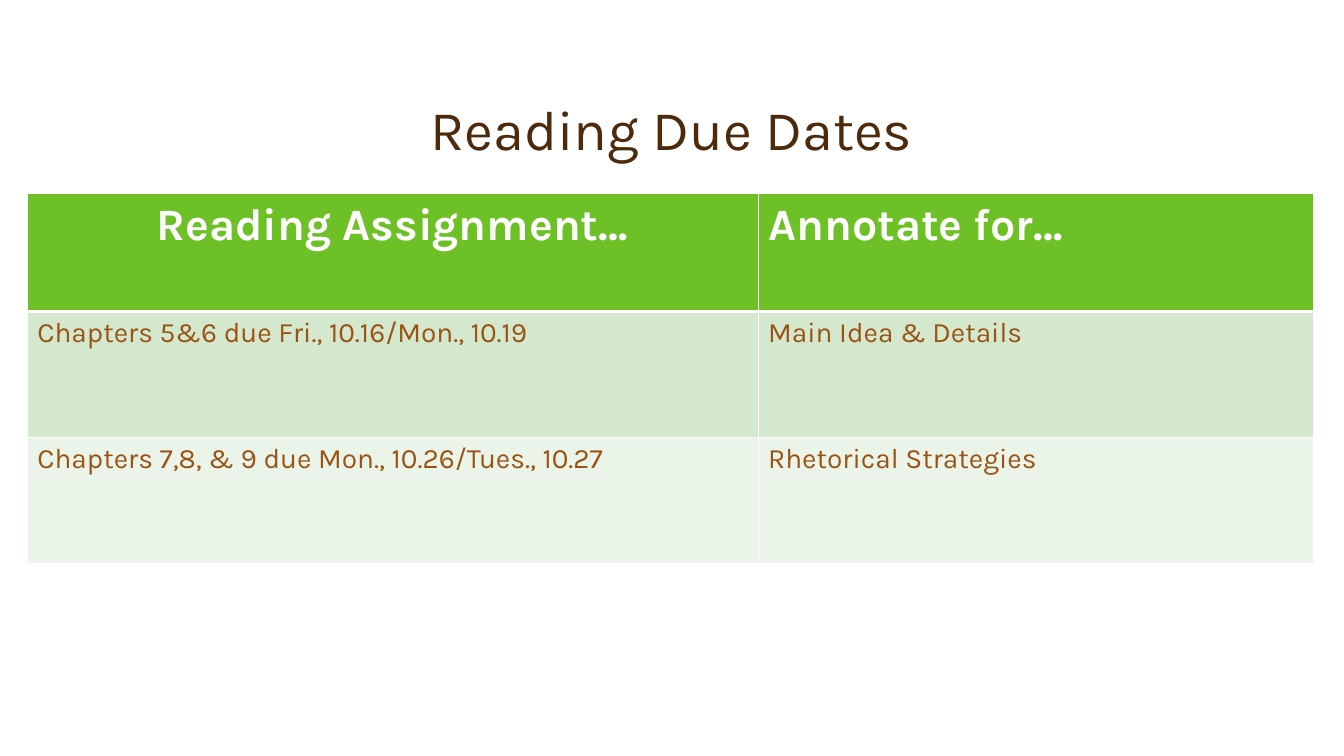
from lxml.etree import SubElement
from pptx import Presentation
from pptx.dml.color import RGBColor
from pptx.enum.text import MSO_ANCHOR, PP_ALIGN
from pptx.oxml.ns import qn
from pptx.util import Pt

FONT = "Karla"
WHITE = "FFFFFF"
GREEN = "6DC025"
BANDS = ("D4E8CD", "EBF4E8")
TITLE_BROWN = "4D2A0B"
TEXT_BROWN = "9A5315"
COL_WIDTHS = (522, 396.72)
ROW_HEIGHTS = (84, 90, 90)
ROWS = (
    ("Reading Assignment…", "Annotate for…"),
    ("Chapters 5&6 due Fri., 10.16/Mon., 10.19", "Main Idea & Details"),
    ("Chapters 7,8, & 9 due Mon., 10.26/Tues., 10.27", "Rhetorical Strategies"),
)


def rgb(color):
    """Return the colour for a hex string."""
    return RGBColor.from_string(color)


def add_run(p, text, size, color, bold=False):
    """Add a styled run to a paragraph."""
    r = p.add_run()
    r.text = text
    r.font.name = FONT
    r.font.size = Pt(size)
    r.font.bold = bold
    r.font.color.rgb = rgb(color)


def add_title(s, text, left, top, width, height):
    """Add the centred title, anchored at the bottom of its box."""
    tf = s.shapes.add_textbox(Pt(left), Pt(top), Pt(width), Pt(height)).text_frame
    tf.word_wrap = True
    tf.vertical_anchor = MSO_ANCHOR.BOTTOM
    p = tf.paragraphs[0]
    p.alignment = PP_ALIGN.CENTER
    p.line_spacing = 0.9
    add_run(p, text, 40, TITLE_BROWN)


def set_borders(cell, **widths):
    """Draw white cell borders with the given widths by side."""
    tcPr = cell._tc.get_or_add_tcPr()
    for side, width in widths.items():
        ln = SubElement(tcPr, qn(f"a:ln{side}"), w=str(Pt(width)))
        fill = SubElement(ln, qn("a:solidFill"))
        SubElement(fill, qn("a:srgbClr"), val=WHITE)


def fill_cell(cell, text, row, col):
    """Style one cell as header or band and add its text."""
    header = row == 0
    set_borders(cell, L=1, R=1, T=3 if row == 1 else 1, B=3 if header else 1)
    cell.fill.solid()
    cell.fill.fore_color.rgb = rgb(GREEN if header else BANDS[(row - 1) % 2])
    p = cell.text_frame.paragraphs[0]
    p.alignment = PP_ALIGN.CENTER if header and col == 0 else PP_ALIGN.LEFT
    add_run(p, text, 32 if header else 20, WHITE if header else TEXT_BROWN, header)


def add_schedule(s, left, top):
    """Add the table of reading assignments."""
    table = s.shapes.add_table(
        len(ROWS), len(COL_WIDTHS), Pt(left), Pt(top),
        Pt(sum(COL_WIDTHS)), Pt(sum(ROW_HEIGHTS))).table
    for column, width in zip(table.columns, COL_WIDTHS):
        column.width = Pt(width)
    for i, (height, texts) in enumerate(zip(ROW_HEIGHTS, ROWS)):
        table.rows[i].height = Pt(height)
        for j, text in enumerate(texts):
            fill_cell(table.cell(i, j), text, i, j)


def main():
    """Build the slide and save it."""
    prs = Presentation()
    prs.slide_width, prs.slide_height = Pt(960), Pt(540)
    s = prs.slides.add_slide(prs.slide_layouts[6])
    add_title(s, "Reading Due Dates", 83.5, 24, 792, 96)
    add_schedule(s, 19.5, 138.5)
    prs.save("out.pptx")


if __name__ == "__main__":
    main()
